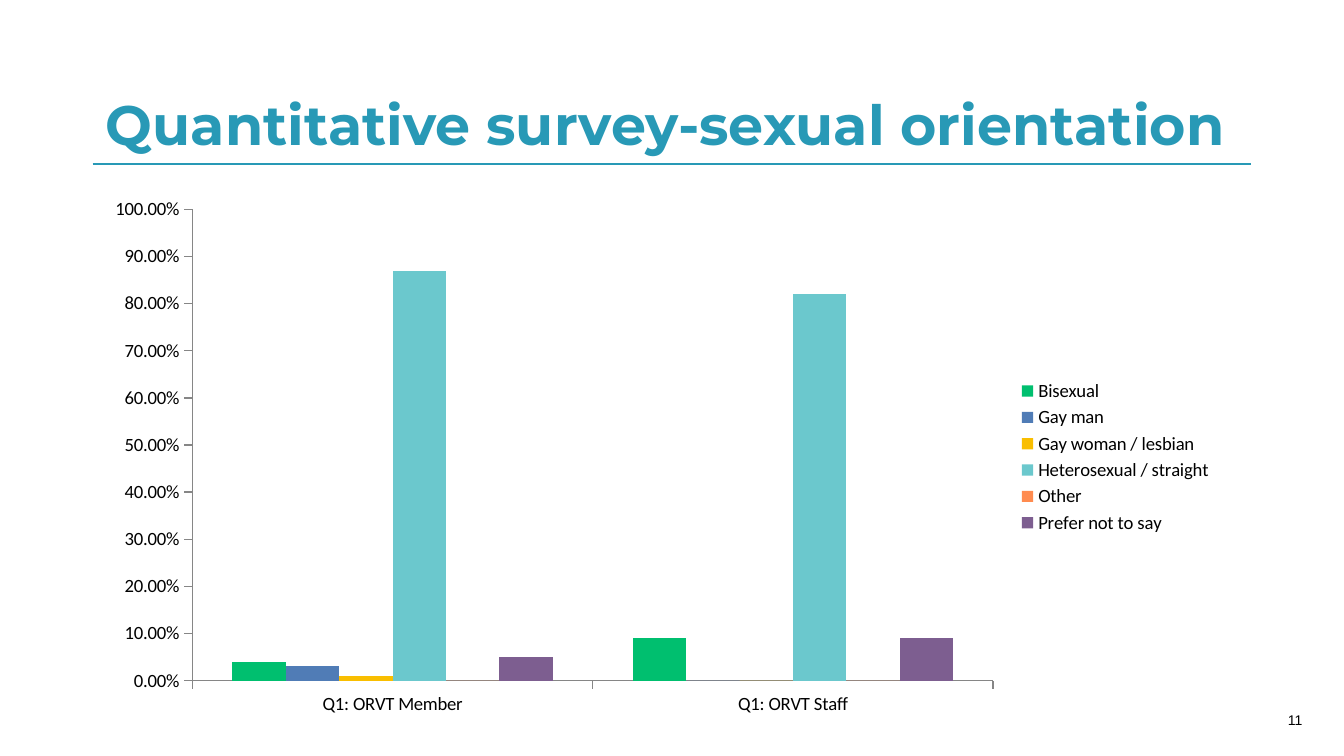
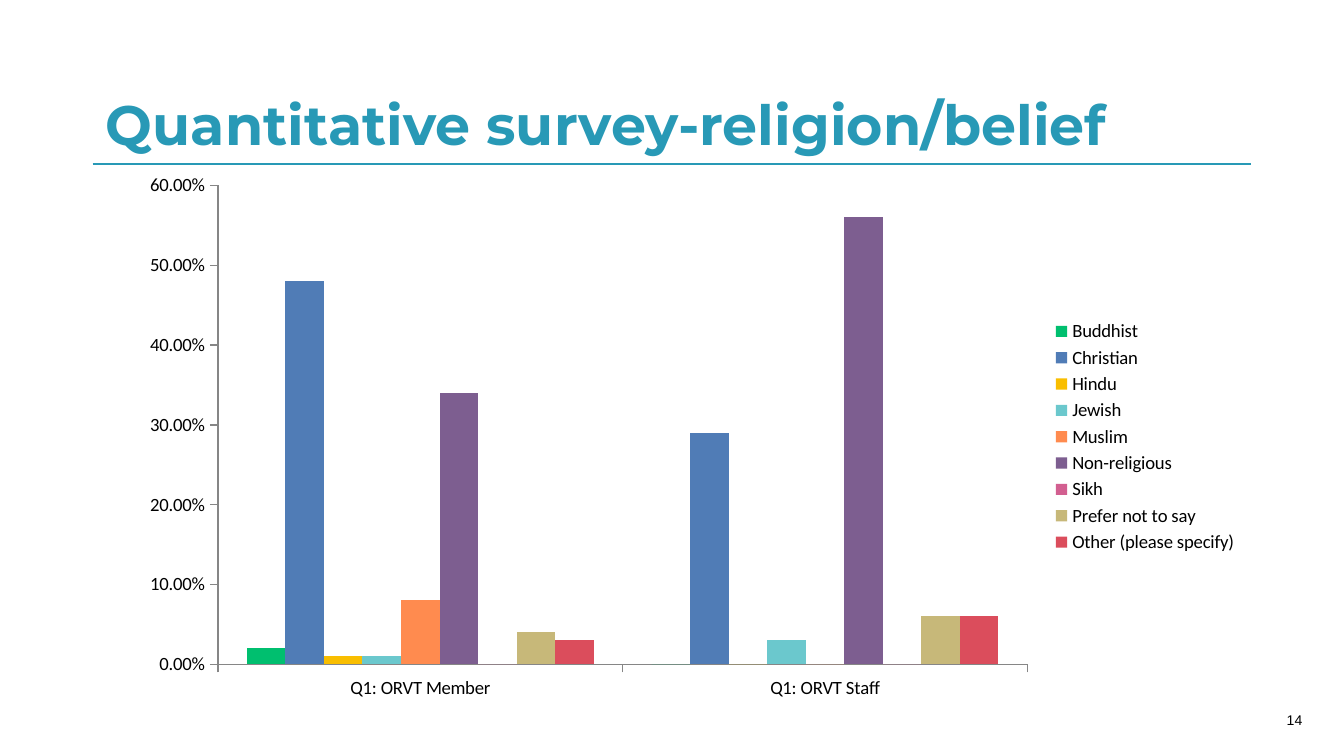
from dataclasses import dataclass

from lxml.etree import SubElement
from pptx import Presentation
from pptx.chart.data import CategoryChartData
from pptx.dml.color import RGBColor
from pptx.enum.chart import XL_CHART_TYPE, XL_LEGEND_POSITION, XL_TICK_MARK
from pptx.enum.shapes import MSO_CONNECTOR
from pptx.enum.text import MSO_ANCHOR, PP_ALIGN
from pptx.oxml.ns import qn
from pptx.util import Inches, Pt


@dataclass(frozen=True)
class Theme:
    width: int = Inches(10)
    height: int = Inches(10) * 9 // 16
    left: float = 6.9
    right: float = 93.1
    rule: float = 21.69
    accent: str = "2899B6"
    text: str = "000000"
    axis: str = "868686"
    title_font: str = "Montserrat"
    number_font: str = "Arial"
    chart_font: str = "Calibri"
    title_size: float = 29.7
    number_size: float = 7.5
    chart_size: float = 10
    series: tuple = ("00BF6F", "507CB6", "F9BE00", "6BC8CD", "FF8B4F",
                     "7D5E90", "D25F90", "C7B879", "DB4D5C")


THEME = Theme()
GROUPS = ("Q1: ORVT Member", "Q1: ORVT Staff")
ORIENTATION = {
    "Bisexual": (0.04, 0.09),
    "Gay man": (0.03, 0),
    "Gay woman / lesbian": (0.01, 0),
    "Heterosexual / straight": (0.87, 0.82),
    "Other": (0, 0),
    "Prefer not to say": (0.05, 0.09),
}
RELIGION = {
    "Buddhist": (0.02, 0),
    "Christian": (0.48, 0.29),
    "Hindu": (0.01, 0),
    "Jewish": (0.01, 0.03),
    "Muslim": (0.08, 0),
    "Non-religious": (0.34, 0.56),
    "Sikh": (0, 0),
    "Prefer not to say": (0.04, 0.06),
    "Other (please specify)": (0.03, 0.06),
}


def place(left, top, width, height):
    column, row = THEME.width / 100, THEME.height / 100
    return (round(left * column), round(top * row),
            round(width * column), round(height * row))


def style_font(font, name, size, color, bold=False):
    font.name = name
    font.size = Pt(size)
    font.bold = bold
    font.color.rgb = RGBColor.from_string(color)


def add_text(slide, box, text, anchor, **font_style):
    frame = slide.shapes.add_textbox(*place(*box)).text_frame
    frame.word_wrap = True
    frame.vertical_anchor = anchor
    paragraph = frame.paragraphs[0]
    run = paragraph.add_run()
    run.text = text
    style_font(run.font, **font_style)
    return frame, paragraph


def add_rule(slide):
    start_x, y, end_x, _ = place(THEME.left, THEME.rule, THEME.right, 0)
    connector = slide.shapes.add_connector(MSO_CONNECTOR.STRAIGHT, start_x, y, end_x, y)
    connector.line.color.rgb = RGBColor.from_string(THEME.accent)
    connector.line.width = Pt(1)
    SubElement(connector._element.spPr, qn("a:effectLst"))


def add_title(slide, text):
    top = 5.33
    box = (THEME.left, top, THEME.right - THEME.left, THEME.rule - top)
    _, paragraph = add_text(slide, box, text, MSO_ANCHOR.BOTTOM, name=THEME.title_font,
                            size=THEME.title_size, color=THEME.accent, bold=True)
    paragraph.line_spacing = 0.9


def add_number(slide, number):
    frame, paragraph = add_text(slide, (74.4, 92.62, 22.5, 5.33), str(number),
                                MSO_ANCHOR.MIDDLE, name=THEME.number_font,
                                size=THEME.number_size, color=THEME.text)
    frame.margin_left = Inches(0.07)
    frame.margin_top = frame.margin_bottom = Inches(0.04)
    frame.margin_right = 0
    paragraph.alignment = PP_ALIGN.RIGHT


def style_axis(axis):
    axis.has_major_gridlines = False
    axis.major_tick_mark = XL_TICK_MARK.OUTSIDE
    axis.minor_tick_mark = XL_TICK_MARK.NONE
    axis.format.line.color.rgb = RGBColor.from_string(THEME.axis)


def add_column_chart(slide, box, answers, maximum):
    data = CategoryChartData(number_format="0.00%")
    data.categories = GROUPS
    for answer, shares in answers.items():
        data.add_series(answer, shares)
    frame = slide.shapes.add_chart(XL_CHART_TYPE.COLUMN_CLUSTERED, *place(*box), data)
    chart = frame.chart
    style_font(chart.font, THEME.chart_font, THEME.chart_size, THEME.text)
    chart.has_title = False
    chart.has_legend = True
    chart.legend.position = XL_LEGEND_POSITION.RIGHT
    chart.legend.include_in_layout = False
    style_axis(chart.category_axis)
    style_axis(chart.value_axis)
    chart.value_axis.minimum_scale = 0
    chart.value_axis.maximum_scale = maximum
    chart.value_axis.major_unit = 0.1
    chart.value_axis.tick_labels.number_format = "0.00%"
    chart.value_axis.tick_labels.number_format_is_linked = False
    plot = chart.plots[0]
    plot.gap_width = 150
    plot.overlap = 0
    plot.vary_by_categories = False
    for series, color in zip(plot.series, THEME.series):
        series.invert_if_negative = False
        series.format.fill.solid()
        series.format.fill.fore_color.rgb = RGBColor.from_string(color)


def add_survey_slide(presentation, title, number, chart_box, answers, maximum):
    slide = presentation.slides.add_slide(presentation.slide_layouts[6])
    add_rule(slide)
    add_number(slide, number)
    add_title(slide, title)
    add_column_chart(slide, chart_box, answers, maximum)


def main():
    presentation = Presentation()
    presentation.slide_width = THEME.width
    presentation.slide_height = THEME.height
    add_survey_slide(presentation, "Quantitative survey-sexual orientation", 11,
                     (THEME.left, 24.89, 84.3, 71.11), ORIENTATION, 1)
    add_survey_slide(presentation, "Quantitative survey-religion/belief", 14,
                     (9.5, THEME.rule, 83.6, 72.18), RELIGION, 0.6)
    presentation.save("out.pptx")


if __name__ == "__main__":
    main()
